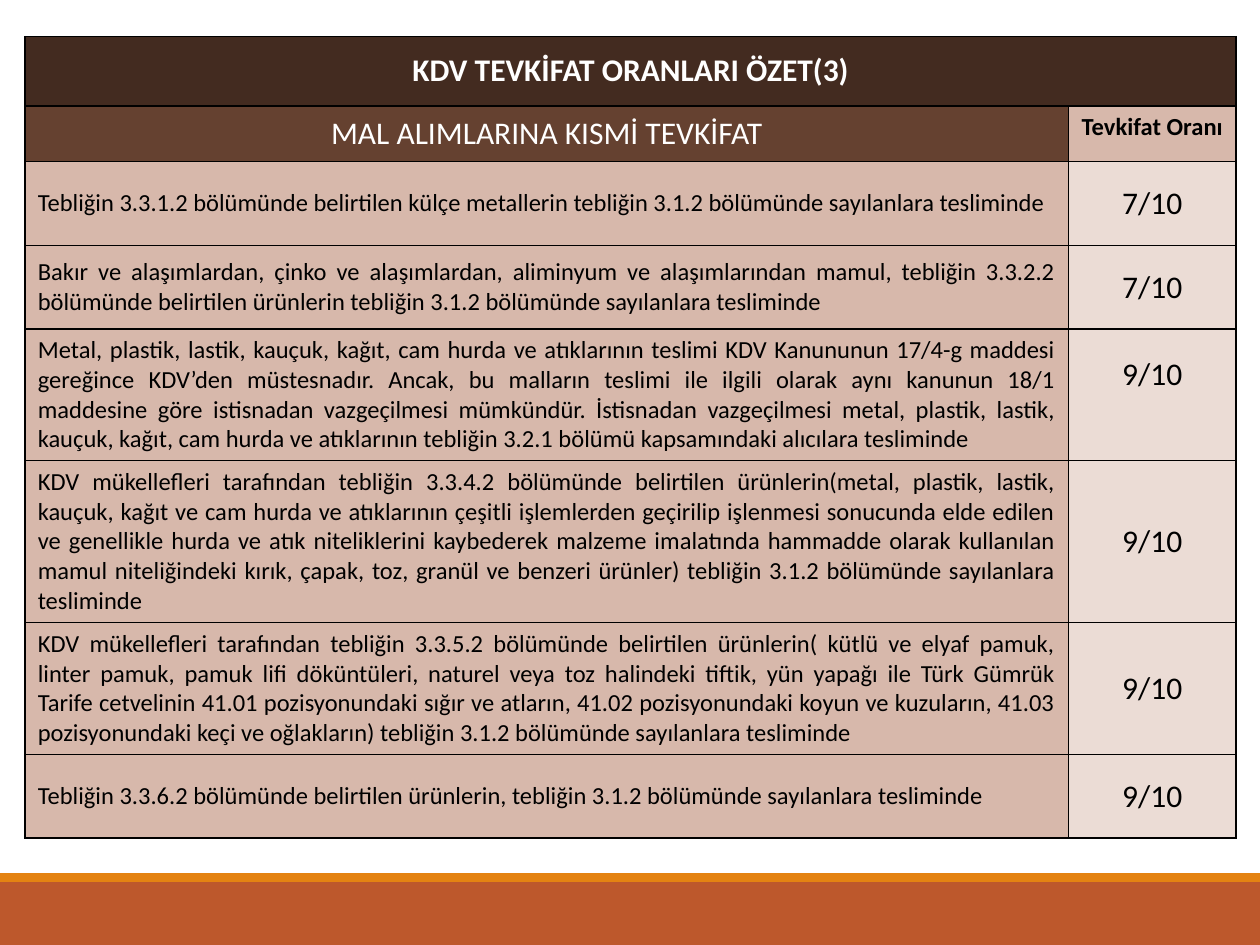
from pptx import Presentation
from pptx.util import Inches, Pt
from pptx.dml.color import RGBColor
from pptx.enum.shapes import MSO_SHAPE
from pptx.enum.text import PP_ALIGN, MSO_ANCHOR
from pptx.oxml import parse_xml
from pptx.oxml.ns import nsdecls


def rgb(value):
    return RGBColor.from_string(value)


def set_cell(cell, text, fill, size=14, color="000000", bold=False,
             align=PP_ALIGN.CENTER, anchor=MSO_ANCHOR.MIDDLE):
    cell.vertical_anchor = anchor
    p = cell.text_frame.paragraphs[0]
    p.alignment = align
    r = p.add_run()
    r.text = text
    r.font.name = "Calibri"
    r.font.size = Pt(size)
    r.font.bold = bold
    r.font.color.rgb = rgb(color)
    # Borders come before the fill in the cell properties
    tcPr = cell._tc.get_or_add_tcPr()
    for side in ("lnL", "lnR", "lnT", "lnB"):
        tcPr.append(parse_xml(
            f'<a:{side} {nsdecls("a")} w="12700"><a:solidFill>'
            f'<a:srgbClr val="000000"/></a:solidFill></a:{side}>'))
    cell.fill.solid()
    cell.fill.fore_color.rgb = rgb(fill)


prs = Presentation()
prs.slide_width, prs.slide_height = Inches(10), Inches(7.5)
s = prs.slides.add_slide(prs.slide_layouts[6])

# Footer bands
for top, height, color in [(7, 0.5, "BD582C"), (6.93, 0.07, "E48312")]:
    sp = s.shapes.add_shape(MSO_SHAPE.RECTANGLE, 0, Inches(top), Inches(10), Inches(height))
    sp.shadow.inherit = False
    sp.fill.solid()
    sp.fill.fore_color.rgb = rgb(color)
    sp.line.fill.background()

# Goods, withholding rate and row height
goods = [
    ("Tebliğin 3.3.1.2 bölümünde belirtilen külçe metallerin tebliğin 3.1.2 bölümünde "
     "sayılanlara tesliminde", "7/10", 0.67),
    ("Bakır ve alaşımlardan, çinko ve alaşımlardan, aliminyum ve alaşımlarından mamul, "
     "tebliğin 3.3.2.2 bölümünde belirtilen ürünlerin tebliğin 3.1.2 bölümünde "
     "sayılanlara tesliminde", "7/10", 0.66),
    ("Metal, plastik, lastik, kauçuk, kağıt, cam hurda ve atıklarının teslimi KDV "
     "Kanununun 17/4-g maddesi gereğince KDV’den müstesnadır. Ancak, bu malların teslimi "
     "ile ilgili olarak aynı kanunun 18/1 maddesine göre istisnadan vazgeçilmesi mümkündür. "
     "İstisnadan vazgeçilmesi metal, plastik, lastik, kauçuk, kağıt, cam hurda ve "
     "atıklarının tebliğin 3.2.1 bölümü kapsamındaki alıcılara tesliminde", "9/10", 1.04),
    ("KDV mükellefleri tarafından tebliğin 3.3.4.2 bölümünde belirtilen ürünlerin(metal, "
     "plastik, lastik, kauçuk, kağıt ve cam hurda ve atıklarının çeşitli işlemlerden "
     "geçirilip işlenmesi sonucunda elde edilen ve genellikle hurda ve atık niteliklerini "
     "kaybederek malzeme imalatında hammadde olarak kullanılan mamul niteliğindeki kırık, "
     "çapak, toz, granül ve benzeri ürünler) tebliğin 3.1.2 bölümünde sayılanlara "
     "tesliminde", "9/10", 1.28),
    ("KDV mükellefleri tarafından tebliğin 3.3.5.2 bölümünde belirtilen ürünlerin( kütlü "
     "ve elyaf pamuk, linter pamuk, pamuk lifi döküntüleri, naturel veya toz halindeki "
     "tiftik, yün yapağı ile Türk Gümrük Tarife cetvelinin 41.01 pozisyonundaki sığır ve "
     "atların, 41.02 pozisyonundaki koyun ve kuzuların, 41.03 pozisyonundaki keçi ve "
     "oğlakların) tebliğin 3.1.2 bölümünde sayılanlara tesliminde", "9/10", 1.05),
    ("Tebliğin 3.3.6.2 bölümünde belirtilen ürünlerin, tebliğin 3.1.2 bölümünde "
     "sayılanlara tesliminde", "9/10", 0.66),
]
heights = [0.55, 0.44] + [height for _, _, height in goods]

# Table grid
table = s.shapes.add_table(len(heights), 2, Inches(0.2), Inches(0.29),
                           Inches(9.61), Inches(sum(heights))).table
for column, width in zip(table.columns, (8.28, 1.33)):
    column.width = Inches(width)
for row, height in zip(table.rows, heights):
    row.height = Inches(height)

# Title and header rows
table.cell(0, 0).merge(table.cell(0, 1))
set_cell(table.cell(0, 0), "KDV TEVKİFAT ORANLARI ÖZET(3)", "432B20",
         size=18, color="FFFFFF", bold=True)
set_cell(table.cell(1, 0), "MAL ALIMLARINA KISMİ TEVKİFAT", "654130",
         size=18, color="FFFFFF")
set_cell(table.cell(1, 1), "Tevkifat Oranı", "D7B8AB", bold=True, anchor=MSO_ANCHOR.TOP)

# Goods rows
for i, (text, rate, _) in enumerate(goods, start=2):
    set_cell(table.cell(i, 0), text, "D7B8AB", align=PP_ALIGN.JUSTIFY)
    set_cell(table.cell(i, 1), rate, "EBDCD5", size=18)

# The scrap rate sits above the middle of its cell
table.cell(4, 1).margin_bottom = Inches(0.37)

prs.save("out.pptx")
